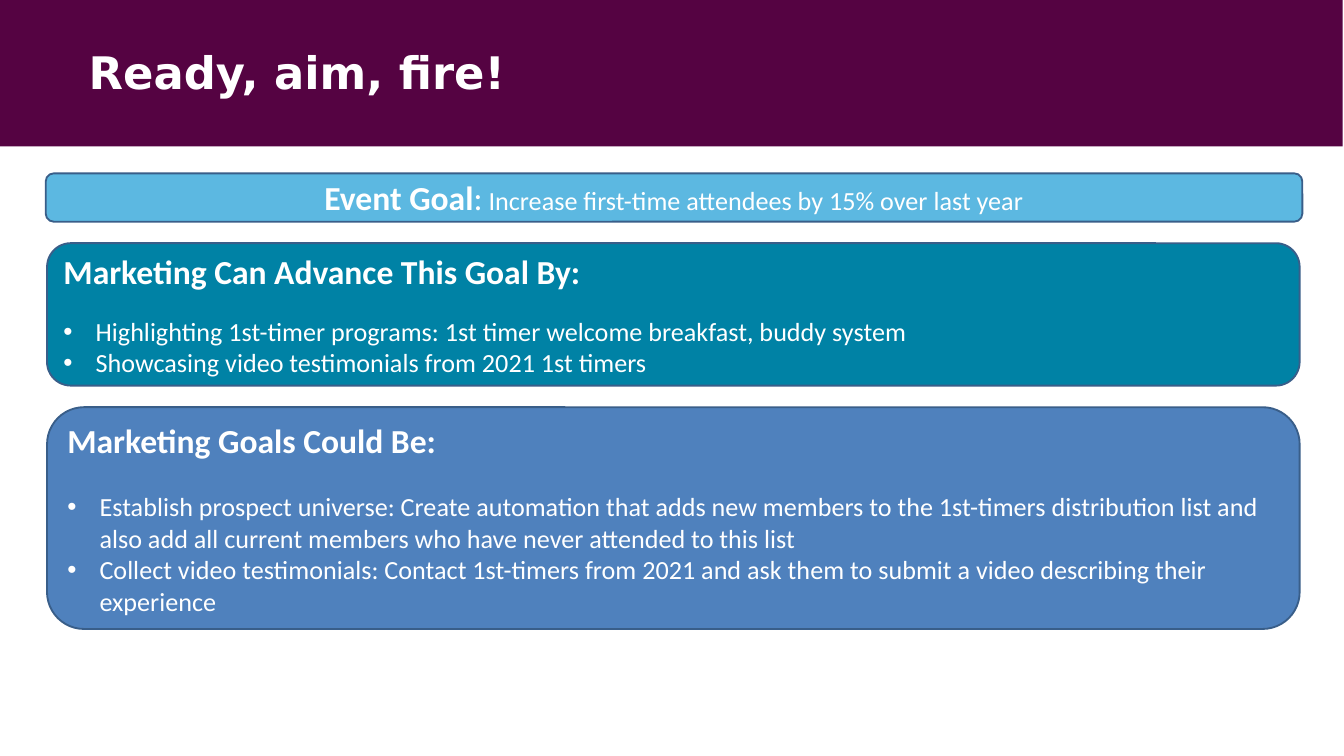
from lxml import etree
from pptx import Presentation
from pptx.dml.color import RGBColor
from pptx.enum import shapes, text
from pptx.oxml import ns
from pptx.util import Inches, Pt

WHITE = RGBColor(0xFF, 0xFF, 0xFF)
PLUM = RGBColor(0x55, 0x03, 0x42)
SKY = RGBColor(0x5C, 0xB8, 0xE1)
TEAL = RGBColor(0x00, 0x82, 0xA5)
BLUE = RGBColor(0x4F, 0x81, 0xBD)
OUTLINE = RGBColor(0x39, 0x5E, 0x89)


class SlideBuilder:
    title_font = "DejaVu Sans"
    body_font = "Calibri"
    heading_size = 18
    body_size = 14
    bullet_indent = Inches(0.24)

    def __init__(self, page):
        self.page = page

    def set_font(self, font, size, bold=False, name=body_font):
        font.name = name
        font.size = Pt(size)
        font.bold = bold
        font.color.rgb = WHITE

    def prepare_frame(self, shape):
        frame = shape.text_frame
        frame.word_wrap = True
        frame.vertical_anchor = text.MSO_ANCHOR.MIDDLE
        frame.margin_left = frame.margin_right = Inches(0.07)
        frame.margin_top = frame.margin_bottom = Inches(0.04)
        return frame

    def block(self, kind, area, fill, outline=None):
        shape = self.page.shapes.add_shape(kind, *map(Inches, area))
        shape.shadow.inherit = False
        shape.fill.solid()
        shape.fill.fore_color.rgb = fill
        if outline is None:
            shape.line.fill.background()
        else:
            shape.line.color.rgb = outline
            shape.line.width = Pt(1)
        return shape

    def title(self, area, wording):
        box = self.page.shapes.add_textbox(*map(Inches, area))
        para = self.prepare_frame(box).paragraphs[0]
        para.text = wording
        para.line_spacing = 0.9
        self.set_font(para.font, 24, True, self.title_font)

    def card(self, area, fill):
        """Draw a rounded card and return its text frame."""
        shape = self.block(shapes.MSO_SHAPE.ROUNDED_RECTANGLE, area, fill, OUTLINE)
        return self.prepare_frame(shape)

    def goal_banner(self, area, fill, label, goal):
        para = self.card(area, fill).paragraphs[0]
        para.alignment = text.PP_ALIGN.CENTER
        for wording, size, bold in (
            (label, self.heading_size, True),
            (":", self.heading_size, False),
            (" " + goal, self.body_size, False),
        ):
            span = para.add_run()
            span.text = wording
            self.set_font(span.font, size, bold)

    def bullet_card(self, area, fill, heading, bullets, gap):
        """Draw a card with a heading, then a gap in points, then bullets."""
        frame = self.card(area, fill)
        para = frame.paragraphs[0]
        para.text = heading
        para.alignment = text.PP_ALIGN.LEFT
        para.space_after = Pt(gap)
        self.set_font(para.font, self.heading_size, True)
        for wording in bullets:
            para = frame.add_paragraph()
            para.text = wording
            para.alignment = text.PP_ALIGN.LEFT
            self.add_bullet(para)
            self.set_font(para.font, self.body_size)

    def add_bullet(self, para):
        properties = para._p.get_or_add_pPr()
        properties.set("marL", str(self.bullet_indent))
        properties.set("indent", str(-self.bullet_indent))
        etree.SubElement(properties, ns.qn("a:buFont"), typeface="Arial")
        etree.SubElement(properties, ns.qn("a:buChar"), char="•")


def main():
    deck = Presentation()
    deck.slide_width = Inches(10)
    deck.slide_height = deck.slide_width * 9 // 16
    builder = SlideBuilder(deck.slides.add_slide(deck.slide_layouts[6]))

    builder.block(shapes.MSO_SHAPE.RECTANGLE, (0, 0, 9.99, 1.09), PLUM)
    builder.title((0.59, 0.15, 8.62, 0.81), "Ready, aim, fire!")
    builder.goal_banner(
        (0.34, 1.29, 9.35, 0.36), SKY,
        "Event Goal", "Increase first-time attendees by 15% over last year",
    )
    builder.bullet_card(
        (0.35, 1.81, 9.32, 1.06), TEAL,
        "Marketing Can Advance This Goal By:",
        [
            "Highlighting 1st-timer programs: 1st timer welcome breakfast, buddy system",
            "Showcasing video testimonials from 2021 1st timers",
        ],
        gap=13,
    )
    builder.bullet_card(
        (0.35, 3.03, 9.32, 1.65), BLUE,
        "Marketing Goals Could Be:",
        [
            "Establish prospect universe: Create automation that adds new members to the "
            "1st-timers distribution list and also add all current members who have never "
            "attended to this list",
            "Collect video testimonials: Contact 1st-timers from 2021 and ask them to "
            "submit a video describing their experience",
        ],
        gap=16.5,
    )
    deck.save("out.pptx")


if __name__ == "__main__":
    main()
